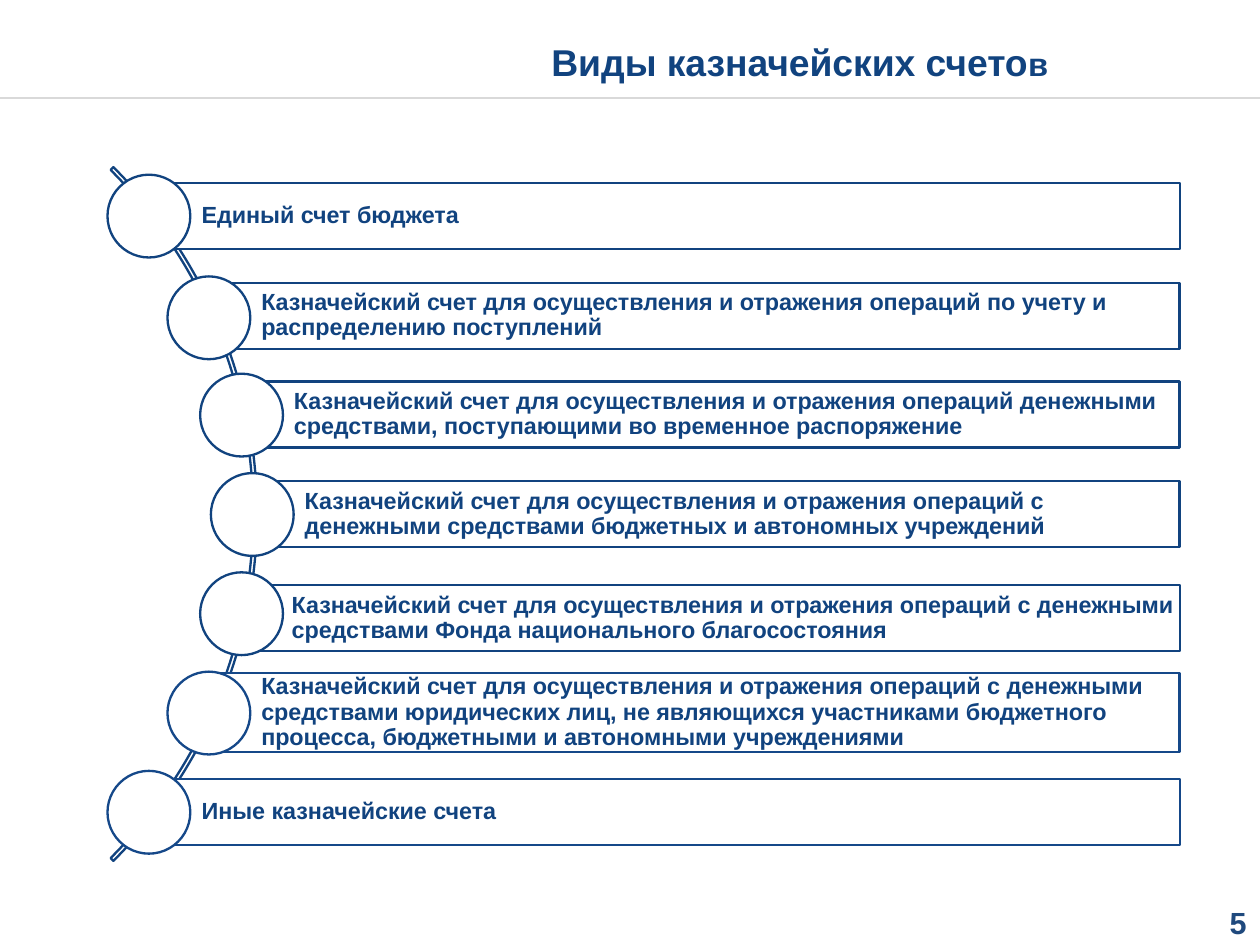
from pptx import Presentation
from pptx.dml.color import RGBColor
from pptx.enum import shapes, text
from pptx.oxml import ns, xmlchemy
from pptx.util import Pt

NAVY = RGBColor(0x11, 0x43, 0x7F)
BLUE = RGBColor(0x15, 0x48, 0x89)
SLATE = RGBColor(0x1F, 0x49, 0x7D)
GREY = RGBColor(0xD9, 0xD9, 0xD9)
WHITE = RGBColor(0xFF, 0xFF, 0xFF)

CIRCLE = 35.5
RIGHT = 505.6
PREFIX = "Казначейский счет для осуществления и отражения операций "

ACCOUNTS = [
    ("Единый счет бюджета", 46.1, 74.9, 64, 78.5, 28.3, NAVY),
    (PREFIX + "по учету и распределению поступлений",
     71.8, 118.5, 89.6, 121.2, 28.3, NAVY),
    (PREFIX + "денежными средствами, поступающими во временное распоряжение",
     85.8, 160.2, 103.6, 163.6, 28.3, NAVY),
    (PREFIX + "с денежными средствами бюджетных и автономных учреждений",
     90.4, 202.8, 108.2, 206.3, 28.3, NAVY),
    (PREFIX + "с денежными средствами Фонда национального благосостояния",
     85.8, 245.3, 102.6, 250.9, 28.3, NAVY),
    (PREFIX + "с денежными средствами юридических лиц, не являющихся участниками "
     "бюджетного процесса, бюджетными и автономными учреждениями",
     71.8, 287.9, 89.6, 288.5, 33.8, BLUE),
    ("Иные казначейские счета", 46.1, 330.4, 64, 333.9, 28.3, BLUE),
]


def add_outlined(kind, box, color, fill=WHITE):
    sp = s.shapes.add_shape(kind, *map(Pt, box))
    sp.shadow.inherit = False
    if fill is None:
        sp.fill.background()
    else:
        sp.fill.solid()
        sp.fill.fore_color.rgb = fill
    sp.line.color.rgb = color
    sp.line.width = Pt(1)
    return sp


def set_text(sp, runs, color, align, anchor, insets=(0, 0, 0, 0)):
    tf = sp.text_frame
    frame = dict(word_wrap=True, auto_size=text.MSO_AUTO_SIZE.NONE, vertical_anchor=anchor)
    sides = ("left", "top", "right", "bottom")
    frame.update({f"margin_{side}": Pt(v) for side, v in zip(sides, insets)})
    for name, value in frame.items():
        setattr(tf, name, value)
    p = tf.paragraphs[0]
    p.alignment = align
    for words, size in runs:
        r = p.add_run()
        r.text = words
        for name, value in dict(name="Arial", size=Pt(size), bold=True).items():
            setattr(r.font, name, value)
        r.font.color.rgb = color
    return p


prs = Presentation()
prs.slide_width, prs.slide_height = Pt(540), Pt(405)
s = prs.slides.add_slide(prs.slide_layouts[5])

rule = s.shapes.add_connector(shapes.MSO_CONNECTOR.STRAIGHT, Pt(0), Pt(42), Pt(540), Pt(42))
rule.line.color.rgb = GREY
rule.line.width = Pt(1)
rule._element.spPr.append(xmlchemy.OxmlElement("a:effectLst"))

title = s.shapes.title
title_box = dict(left=167.8, top=16.6, width=350, height=19.4)
for name, value in title_box.items():
    setattr(title, name, Pt(value))
set_text(title, [("Виды казначейских счето", 16), ("в", 14)], NAVY,
         text.PP_ALIGN.CENTER, text.MSO_ANCHOR.TOP)

number = s.shapes.add_textbox(Pt(409.7), Pt(387.4), Pt(124.6), Pt(15.8))
set_text(number, [("5", 13.1)], SLATE, text.PP_ALIGN.RIGHT, text.MSO_ANCHOR.TOP)

arc = add_outlined(shapes.MSO_SHAPE.BLOCK_ARC, (-310.3, 10.1, 420.5, 420.5), NAVY, None)
for i, value in enumerate((189, 27, 0.004)):
    arc.adjustments[i] = value

for label, circle_x, circle_y, x, y, height, color in ACCOUNTS:
    bar = add_outlined(shapes.MSO_SHAPE.RECTANGLE, (x, y, RIGHT - x, height), color)
    p = set_text(bar, [(label, 10)], NAVY, text.PP_ALIGN.LEFT,
                 text.MSO_ANCHOR.MIDDLE, (22.4, 2, 1, 2))
    p.line_spacing = 0.9
    add_outlined(shapes.MSO_SHAPE.OVAL, (circle_x, circle_y, CIRCLE, CIRCLE), color)

prs.save("out.pptx")
